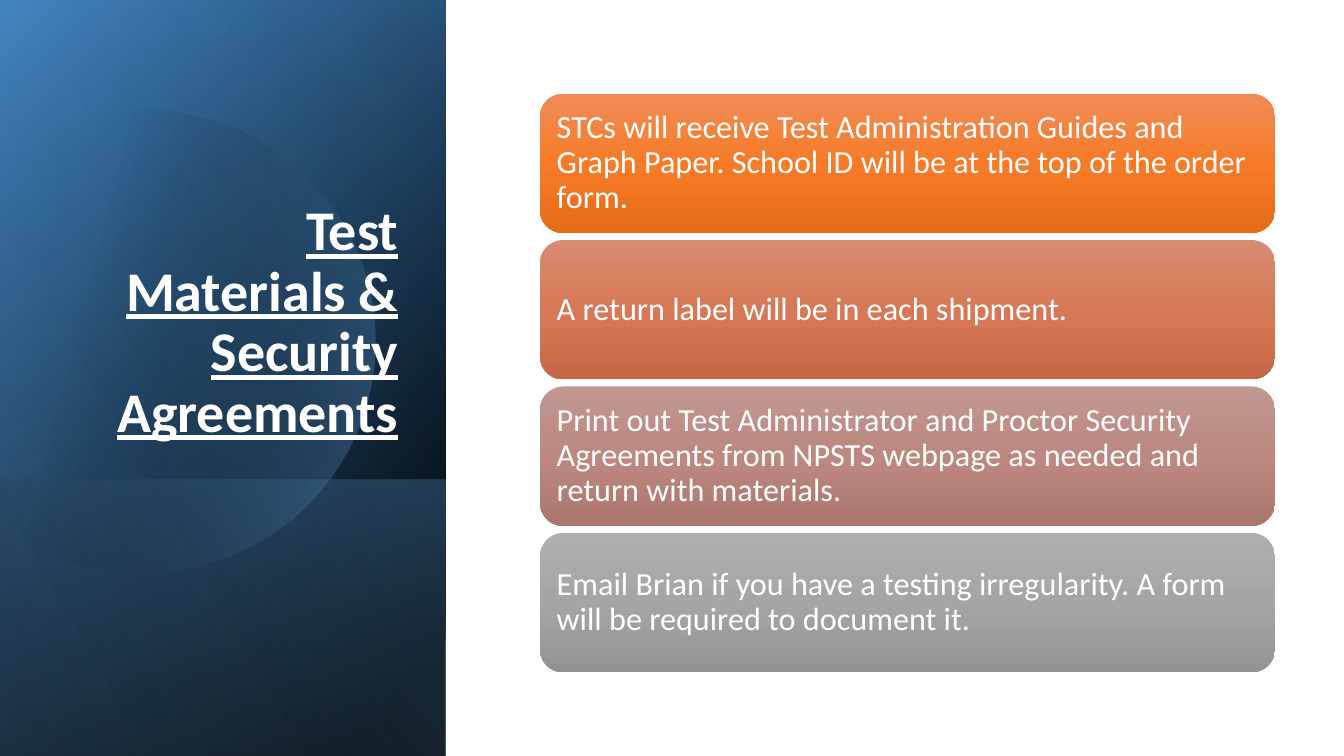
from dataclasses import dataclass
from math import acos, cos, sin

from lxml import etree
from pptx import Presentation
from pptx.dml.color import RGBColor
from pptx.enum.shapes import MSO_SHAPE
from pptx.enum.text import MSO_ANCHOR, MSO_AUTO_SIZE, PP_ALIGN
from pptx.oxml.ns import qn
from pptx.shapes.autoshape import Shape
from pptx.slide import Slide
from pptx.util import Cm, Pt

RECTANGLE = MSO_SHAPE.RECTANGLE
ROUNDED_RECTANGLE = MSO_SHAPE.ROUNDED_RECTANGLE
ALIGN_LEFT, ALIGN_RIGHT = PP_ALIGN.LEFT, PP_ALIGN.RIGHT
ANCHOR_MIDDLE, ANCHOR_BOTTOM = MSO_ANCHOR.MIDDLE, MSO_ANCHOR.BOTTOM
NO_AUTO_SIZE = MSO_AUTO_SIZE.NONE
TITLE_ONLY_LAYOUT = 5


@dataclass(frozen=True)
class Theme:
    font: str = "Calibri"
    title_size: int = 40
    card_size: int = 23
    line_spacing: float = 0.9
    text: str = "FFFFFF"
    black: str = "000000"
    deep_blue: str = "2E75B6"
    blue: str = "5B9BD5"
    pale_blue: str = "9DC3E6"
    orange: tuple[str, ...] = ("F18C57", "F67B28", "E56C19")
    copper: tuple[str, ...] = ("D78B72", "D77956", "C66846")
    rose: tuple[str, ...] = ("C19791", "BC8880", "AA766E")
    grey: tuple[str, ...] = ("AFAFAF", "A5A5A5", "939393")


THEME = Theme()


@dataclass(frozen=True)
class Stop:
    position: int
    color: str
    opacity: int = 100


@dataclass(frozen=True)
class Gradient:
    angle: int
    stops: tuple[Stop, ...]


@dataclass(frozen=True)
class Panel:
    top: float
    gradient: Gradient


@dataclass(frozen=True)
class Card:
    text: str
    colors: tuple[str, ...]


SLIDE_WIDTH, SLIDE_HEIGHT = 33.87, 19.05
PANEL_WIDTH = 11.23
CARD_LEFT, CARD_TOP, CARD_WIDTH, CARD_HEIGHT = 13.61, 2.36, 18.52, 3.51
CARD_PITCH = 3.69
DISC_X, DISC_Y, DISC_RADIUS, DISC_LEFT = 3.61, 8.6, 5.84, -0.38
DISC_STEPS = 90

PANELS_BELOW_DISC = (
    Panel(0, Gradient(50, (Stop(8, THEME.black), Stop(100, THEME.deep_blue)))),
    Panel(0, Gradient(30, (Stop(0, THEME.black, 0), Stop(99, THEME.blue, 46)))),
    Panel(12.09, Gradient(130, (Stop(2, THEME.blue, 29), Stop(100, THEME.black, 30)))),
)
DISC_GRADIENT = Gradient(14, (Stop(29, THEME.black, 0), Stop(100, THEME.blue, 43)))
PANEL_ABOVE_DISC = Panel(
    0, Gradient(120, (Stop(0, THEME.black, 0), Stop(99, THEME.pale_blue, 11)))
)

TITLE = "Test Materials & Security Agreements"
CARDS = (
    Card(
        "STCs will receive Test Administration Guides and Graph Paper. "
        "School ID will be at the top of the order form.",
        THEME.orange,
    ),
    Card("A return label will be in each shipment.", THEME.copper),
    Card(
        "Print out Test Administrator and Proctor Security Agreements "
        "from NPSTS webpage as needed and return with materials.",
        THEME.rose,
    ),
    Card(
        "Email Brian if you have a testing irregularity. "
        "A form will be required to document it.",
        THEME.grey,
    ),
)


def paint(shape: Shape, gradient: Gradient) -> None:
    shape.shadow.inherit = False
    shape.line.fill.background()
    shape.fill.gradient()
    shape.fill.gradient_angle = 360 - gradient.angle
    stop_list = shape.element.spPr.find(".//" + qn("a:gsLst"))
    for old_stop in list(stop_list):
        stop_list.remove(old_stop)
    for stop in gradient.stops:
        entry = etree.SubElement(stop_list, qn("a:gs"), pos=str(stop.position * 1000))
        color = etree.SubElement(entry, qn("a:srgbClr"), val=stop.color)
        if stop.opacity < 100:
            etree.SubElement(color, qn("a:alpha"), val=str(stop.opacity * 1000))


def write(shape: Shape, text: str, size: int, align: PP_ALIGN, anchor: MSO_ANCHOR) -> None:
    frame = shape.text_frame
    frame.text = text
    frame.word_wrap = True
    frame.auto_size = NO_AUTO_SIZE
    frame.vertical_anchor = anchor
    paragraph = frame.paragraphs[0]
    paragraph.alignment = align
    paragraph.line_spacing = THEME.line_spacing
    paragraph.space_before = Pt(0)
    font = paragraph.runs[0].font
    font.name = THEME.font
    font.size = Pt(size)
    font.color.rgb = RGBColor.from_string(THEME.text)


def draw_panel(slide: Slide, panel: Panel) -> None:
    height = SLIDE_HEIGHT - panel.top
    offset = (PANEL_WIDTH - height) / 2
    shape = slide.shapes.add_shape(
        RECTANGLE, Cm(offset), Cm(panel.top - offset), Cm(height), Cm(PANEL_WIDTH)
    )
    shape.rotation = 90
    shape.element.spPr.find(qn("a:xfrm")).set("flipH", "1")
    paint(shape, panel.gradient)


def draw_disc(slide: Slide) -> None:
    reach = acos((DISC_LEFT - DISC_X) / DISC_RADIUS)
    angles = [reach * (2 * step / DISC_STEPS - 1) for step in range(DISC_STEPS + 1)]
    points = [
        (Cm(DISC_X + DISC_RADIUS * cos(angle)), Cm(DISC_Y + DISC_RADIUS * sin(angle)))
        for angle in angles
    ]
    builder = slide.shapes.build_freeform(*points[0])
    builder.add_line_segments(points[1:], close=True)
    paint(builder.convert_to_shape(), DISC_GRADIENT)


def draw_title(slide: Slide) -> None:
    title = slide.shapes.title
    title.left, title.top, title.width, title.height = Cm(1.63), Cm(4.67), Cm(8.66), Cm(6.65)
    write(title, TITLE, THEME.title_size, ALIGN_RIGHT, ANCHOR_BOTTOM)
    font = title.text_frame.paragraphs[0].runs[0].font
    font.bold = True
    font.underline = True
    title.element.getparent().append(title.element)


def draw_card(slide: Slide, card: Card, top: float) -> None:
    shape = slide.shapes.add_shape(
        ROUNDED_RECTANGLE, Cm(CARD_LEFT), Cm(top), Cm(CARD_WIDTH), Cm(CARD_HEIGHT)
    )
    stops = tuple(Stop(50 * index, color) for index, color in enumerate(card.colors))
    paint(shape, Gradient(90, stops))
    write(shape, card.text, THEME.card_size, ALIGN_LEFT, ANCHOR_MIDDLE)
    frame = shape.text_frame
    frame.margin_left = frame.margin_right = Cm(0.25)
    frame.margin_top = frame.margin_bottom = Cm(0.25)


def main() -> None:
    presentation = Presentation()
    presentation.slide_width = Cm(SLIDE_WIDTH)
    presentation.slide_height = Cm(SLIDE_HEIGHT)
    slide = presentation.slides.add_slide(presentation.slide_layouts[TITLE_ONLY_LAYOUT])
    for panel in PANELS_BELOW_DISC:
        draw_panel(slide, panel)
    draw_disc(slide)
    draw_panel(slide, PANEL_ABOVE_DISC)
    draw_title(slide)
    for index, card in enumerate(CARDS):
        draw_card(slide, card, CARD_TOP + index * CARD_PITCH)
    presentation.save("out.pptx")


if __name__ == "__main__":
    main()
